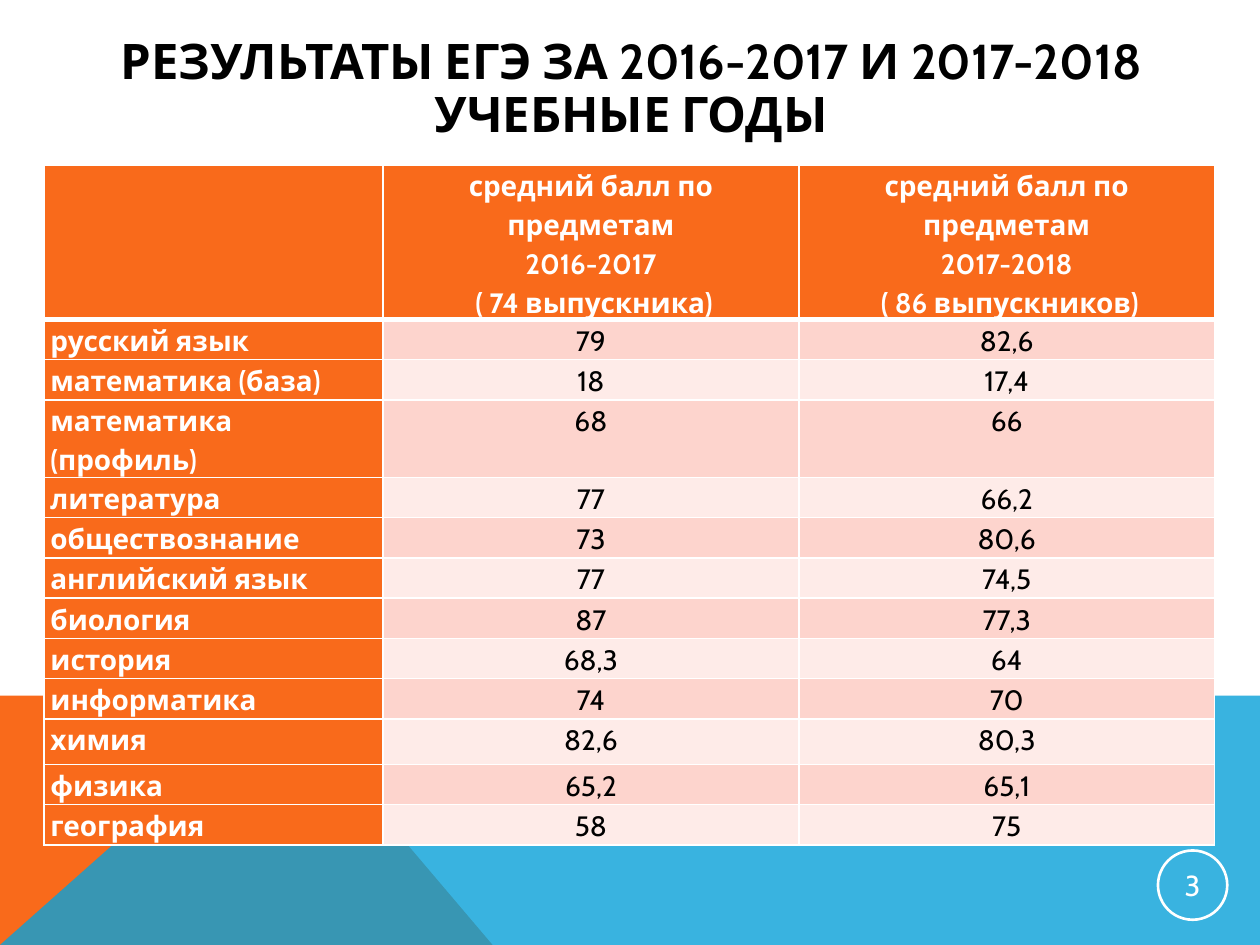
from lxml import etree
from pptx import Presentation
from pptx.dml.color import RGBColor
from pptx.enum import shapes, text
from pptx.oxml import ns
from pptx.util import Inches, Pt

FONT = "Cabin"
WHITE = RGBColor(0xFF, 0xFF, 0xFF)
BLACK = RGBColor(0x00, 0x00, 0x00)
ORANGE = RGBColor(0xF9, 0x6A, 0x1B)
BLUE = RGBColor(0x08, 0xA1, 0xD9)
PINK = RGBColor(0xFD, 0xD4, 0xCD)
PALE_PINK = RGBColor(0xFE, 0xEB, 0xE8)

TITLE = "РЕЗУЛЬТАТЫ ЕГЭ ЗА 2016-2017 И 2017-2018 УЧЕБНЫЕ ГОДЫ"
HEADINGS = [
    [],
    ["средний балл по предметам", "2016-2017", " ( 74 выпускника)"],
    ["средний балл по предметам", "2017-2018", " ( 86 выпускников)"],
]
SCORES = [
    ("русский язык", "79", "82,6"),
    ("математика (база)", "18", "17,4"),
    ("математика (профиль)", "68", "66"),
    ("литература", "77", "66,2"),
    ("обществознание", "73", "80,6"),
    ("английский язык", "77", "74,5"),
    ("биология", "87", "77,3"),
    ("история", "68,3", "64"),
    ("информатика", "74", "70"),
    ("химия", "82,6", "80,3"),
    ("физика", "65,2", "65,1"),
    ("география", "58", "75"),
]
COLUMN_WIDTHS = [2.69, 3.3, 3.3]
HEADER_HEIGHT, ROW_HEIGHT, CHEMISTRY_HEIGHT = 0.97, 0.32, 0.36


def write_lines(frame, lines, size, color, bold=False, centred=True, spacing=None):
    for i, line in enumerate(lines):
        paragraph = frame.paragraphs[0] if i == 0 else frame.add_paragraph()
        paragraph.alignment = text.PP_ALIGN.CENTER if centred else text.PP_ALIGN.LEFT
        if spacing:
            paragraph.line_spacing = spacing
        run = paragraph.add_run()
        run.text = line
        run.font.name = FONT
        run.font.size = Pt(size)
        run.font.bold = bold
        run.font.color.rgb = color


def add_band(slide, points, color, opacity=100):
    corners = [(Inches(x), Inches(y)) for x, y in points]
    builder = slide.shapes.build_freeform(*corners[0])
    builder.add_line_segments(corners[1:], close=True)
    band = builder.convert_to_shape()
    band.shadow.inherit = False
    band.line.fill.background()
    band.fill.solid()
    band.fill.fore_color.rgb = color
    if opacity < 100:
        srgb = band.fill._xPr.find(".//" + ns.qn("a:srgbClr"))
        etree.SubElement(srgb, ns.qn("a:alpha"), val=str(opacity * 1000))


def add_title(slide):
    title = slide.shapes.add_textbox(Inches(0.51), Inches(0.13), Inches(9), Inches(1.17))
    frame = title.text_frame
    frame.word_wrap = True
    frame.vertical_anchor = text.MSO_ANCHOR.MIDDLE
    write_lines(frame, [TITLE], 28, BLACK, bold=True, spacing=0.9)


def add_page_number(slide, number):
    circle = slide.shapes.add_shape(
        shapes.MSO_SHAPE.OVAL, Inches(9.19), Inches(6.75), Inches(0.55), Inches(0.55))
    circle.shadow.inherit = False
    circle.fill.background()
    circle.line.color.rgb = WHITE
    circle.line.width = Pt(1.5)
    frame = circle.text_frame
    frame.margin_left = frame.margin_right = Inches(0.01)
    frame.margin_top = frame.margin_bottom = Inches(0.01)
    frame.vertical_anchor = text.MSO_ANCHOR.MIDDLE
    write_lines(frame, [number], 16.5, WHITE)


def set_borders(cell, **widths):
    properties = cell._tc.get_or_add_tcPr()
    # Border lines come before the fill, in the order left, right, top, bottom
    for i, side in enumerate("LRTB"):
        line = etree.Element(ns.qn("a:ln" + side), w=str(Pt(widths.get(side, 1))))
        fill = etree.SubElement(line, ns.qn("a:solidFill"))
        etree.SubElement(fill, ns.qn("a:srgbClr"), val=str(WHITE))
        properties.insert(i, line)


def fill_cell(cell, lines, fill, color, bold, centred, **borders):
    cell.margin_left = cell.margin_right = Inches(0.05)
    cell.margin_top = cell.margin_bottom = 0
    cell.fill.solid()
    cell.fill.fore_color.rgb = fill
    set_borders(cell, **borders)
    write_lines(cell.text_frame, lines, 16, color, bold, centred, spacing=1.15)


def add_score_table(slide):
    heights = [HEADER_HEIGHT] + [
        CHEMISTRY_HEIGHT if subject == "химия" else ROW_HEIGHT for subject, *_ in SCORES]
    table = slide.shapes.add_table(
        len(heights), len(COLUMN_WIDTHS), Inches(0.35), Inches(1.31),
        Inches(sum(COLUMN_WIDTHS)), Inches(sum(heights))).table
    for column, width in zip(table.columns, COLUMN_WIDTHS):
        column.width = Inches(width)
    for row, height in zip(table.rows, heights):
        row.height = Inches(height)

    # Header row with a thick rule below it
    for c, lines in enumerate(HEADINGS):
        fill_cell(table.cell(0, c), lines, ORANGE, WHITE, True, True, B=3)

    # Subjects and their average scores in alternating tints
    for r, (subject, *scores) in enumerate(SCORES, start=1):
        top = 3 if r == 1 else 1
        fill_cell(table.cell(r, 0), [subject], ORANGE, WHITE, True, False, T=top)
        tint = PINK if r % 2 else PALE_PINK
        for c, score in enumerate(scores, start=1):
            fill_cell(table.cell(r, c), [score], tint, BLACK, False, True, T=top)


def main():
    deck = Presentation()
    deck.slide_width, deck.slide_height = Inches(10), Inches(7.5)
    slide = deck.slides.add_slide(deck.slide_layouts[6])

    # Coloured bands at the foot of the slide
    add_band(slide, [(0, 7.5), (0, 5.52), (2.23, 5.52), (3.91, 7.5)], ORANGE)
    add_band(slide, [(0, 7.5), (2.23, 5.52), (10, 5.52), (10, 7.5)], BLUE, opacity=80)

    # Content
    add_title(slide)
    add_page_number(slide, "3")
    add_score_table(slide)
    deck.save("out.pptx")


if __name__ == "__main__":
    main()
